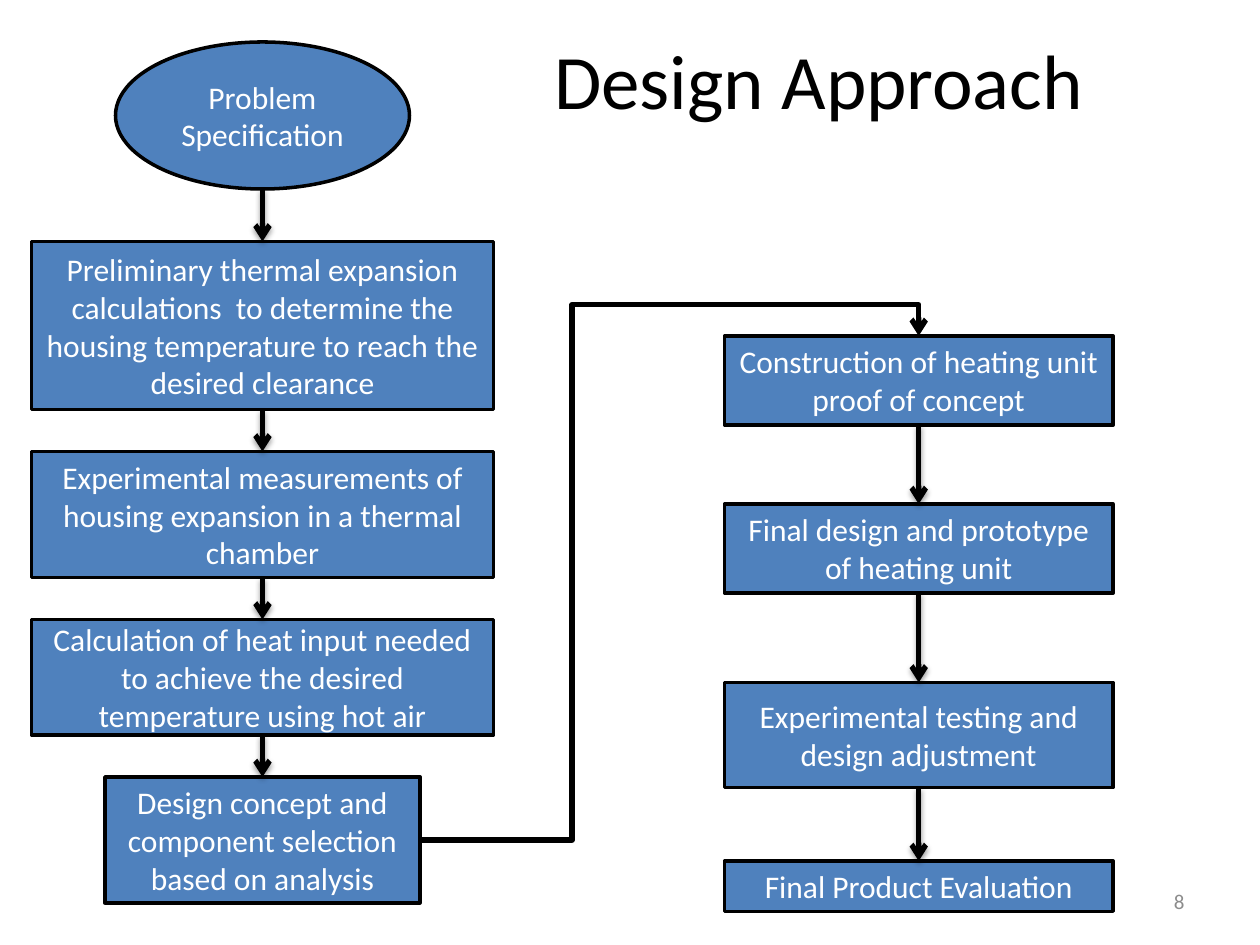
import dataclasses
import itertools

import lxml.etree
import pptx
import pptx.dml.color
import pptx.enum.shapes
import pptx.enum.text
import pptx.oxml.ns
import pptx.util

EMU_PER_PX = 7620
SHAPE = pptx.enum.shapes.MSO_SHAPE
CONNECTOR = pptx.enum.shapes.MSO_CONNECTOR
ALIGN = pptx.enum.text.PP_ALIGN
ANCHOR = pptx.enum.text.MSO_ANCHOR
FIT = pptx.enum.text.MSO_AUTO_SIZE
TOP, LEFT, BOTTOM, RIGHT = range(4)


@dataclasses.dataclass
class Step:
    text: str
    left: int
    top: int
    width: int
    height: int
    kind: int = SHAPE.RECTANGLE
    fits_text: bool = False


DESIGN_STEPS = [
    Step("Problem Specification", 110, 40, 280, 140, SHAPE.OVAL),
    Step("Preliminary thermal expansion calculations  to determine the housing "
         "temperature to reach the desired clearance", 30, 230, 440, 160),
    Step("Experimental measurements of housing expansion in a thermal chamber",
         30, 430, 440, 120),
    Step("Calculation of heat input needed to achieve the desired temperature "
         "using hot air", 30, 590, 440, 110),
    Step("Design concept and component selection based on analysis",
         100, 740, 300, 120),
]
BUILD_STEPS = [
    Step("Construction of heating unit proof of concept",
         690, 320, 370, 85, fits_text=True),
    Step("Final design and prototype of heating unit",
         690, 480, 370, 85, fits_text=True),
    Step("Experimental testing and design adjustment", 690, 650, 370, 100),
    Step("Final Product Evaluation", 690, 820, 370, 48, fits_text=True),
]


def px(length: int) -> pptx.util.Emu:
    return pptx.util.Emu(length * EMU_PER_PX)


def color(value: str) -> pptx.dml.color.RGBColor:
    return pptx.dml.color.RGBColor.from_string(value)


def set_format(target, values: dict) -> None:
    for name, value in values.items():
        setattr(target, name, value)


def add_node(parent, tag: str, **attributes: str):
    return lxml.etree.SubElement(parent, pptx.oxml.ns.qn(tag), attributes)


def write_text(box, text: str, size: int, ink: str, align=ALIGN.CENTER,
               anchor=ANCHOR.MIDDLE, auto_size=FIT.NONE) -> None:
    frame = box.text_frame
    set_format(frame, {"word_wrap": True, "vertical_anchor": anchor,
                       "auto_size": auto_size})
    para = frame.paragraphs[0]
    para.alignment = align
    span = para.add_run()
    span.text = text
    set_format(span.font, {"name": "Calibri", "size": pptx.util.Pt(size)})
    span.font.color.rgb = color(ink)


def set_line(shape, width: int) -> None:
    shape.line.color.rgb = color("000000")
    shape.line.width = pptx.util.Pt(width)


def draw_step(page, step: Step):
    box = page.shapes.add_shape(step.kind, px(step.left), px(step.top),
                                px(step.width), px(step.height))
    box.shadow.inherit = False
    box.fill.solid()
    box.fill.fore_color.rgb = color("4F81BD")
    set_line(box, 2)
    if step.fits_text:
        write_text(box, step.text, 18, "FFFFFF", anchor=ANCHOR.TOP,
                   auto_size=FIT.SHAPE_TO_FIT_TEXT)
    else:
        write_text(box, step.text, 18, "FFFFFF")
    return box


def draw_arrow(page, start, start_side: int, end, kind=CONNECTOR.STRAIGHT):
    arrow = page.shapes.add_connector(kind, 0, 0, 0, 0)
    arrow.begin_connect(start, start_side)
    arrow.end_connect(end, TOP)
    set_line(arrow, 3)
    properties = arrow._element.spPr
    add_node(properties.find(pptx.oxml.ns.qn("a:ln")), "a:tailEnd", type="arrow")
    effects = add_node(properties, "a:effectLst")
    if kind == CONNECTOR.STRAIGHT:
        shadow = add_node(effects, "a:outerShdw", blurRad="40000", dist="20000",
                          dir="5400000", rotWithShape="0")
        ink = add_node(shadow, "a:srgbClr", val="000000")
        add_node(ink, "a:alpha", val="38000")
    return arrow


def draw_detour(page, start, end) -> None:
    arrow = draw_arrow(page, start, RIGHT, end, CONNECTOR.ELBOW)
    geometry = arrow._element.spPr.find(pptx.oxml.ns.qn("a:prstGeom"))
    geometry.set("prst", "bentConnector4")
    guides = geometry.find(pptx.oxml.ns.qn("a:avLst"))
    for name, value in {"adj1": 30500, "adj2": 106200}.items():
        add_node(guides, "a:gd", name=name, fmla=f"val {value}")


def draw_column(page, steps: list[Step]) -> list:
    boxes = [draw_step(page, step) for step in steps]
    for upper, lower in itertools.pairwise(boxes):
        draw_arrow(page, upper, BOTTOM, lower)
    return boxes


def main() -> None:
    deck = pptx.Presentation()
    set_format(deck, {"slide_width": px(1200), "slide_height": px(900)})
    page = deck.slides.add_slide(deck.slide_layouts[5])

    title = page.shapes.title
    set_format(title, {"left": px(240), "top": px(0),
                       "width": px(1080), "height": px(150)})
    write_text(title, "Design Approach", 44, "000000")
    number = page.shapes.add_textbox(px(860), px(834), px(280), px(48))
    write_text(number, "8", 12, "8C8C8C", align=ALIGN.RIGHT)

    design = draw_column(page, DESIGN_STEPS)
    build = draw_column(page, BUILD_STEPS)
    draw_detour(page, design[-1], build[0])
    deck.save("out.pptx")


if __name__ == "__main__":
    main()
